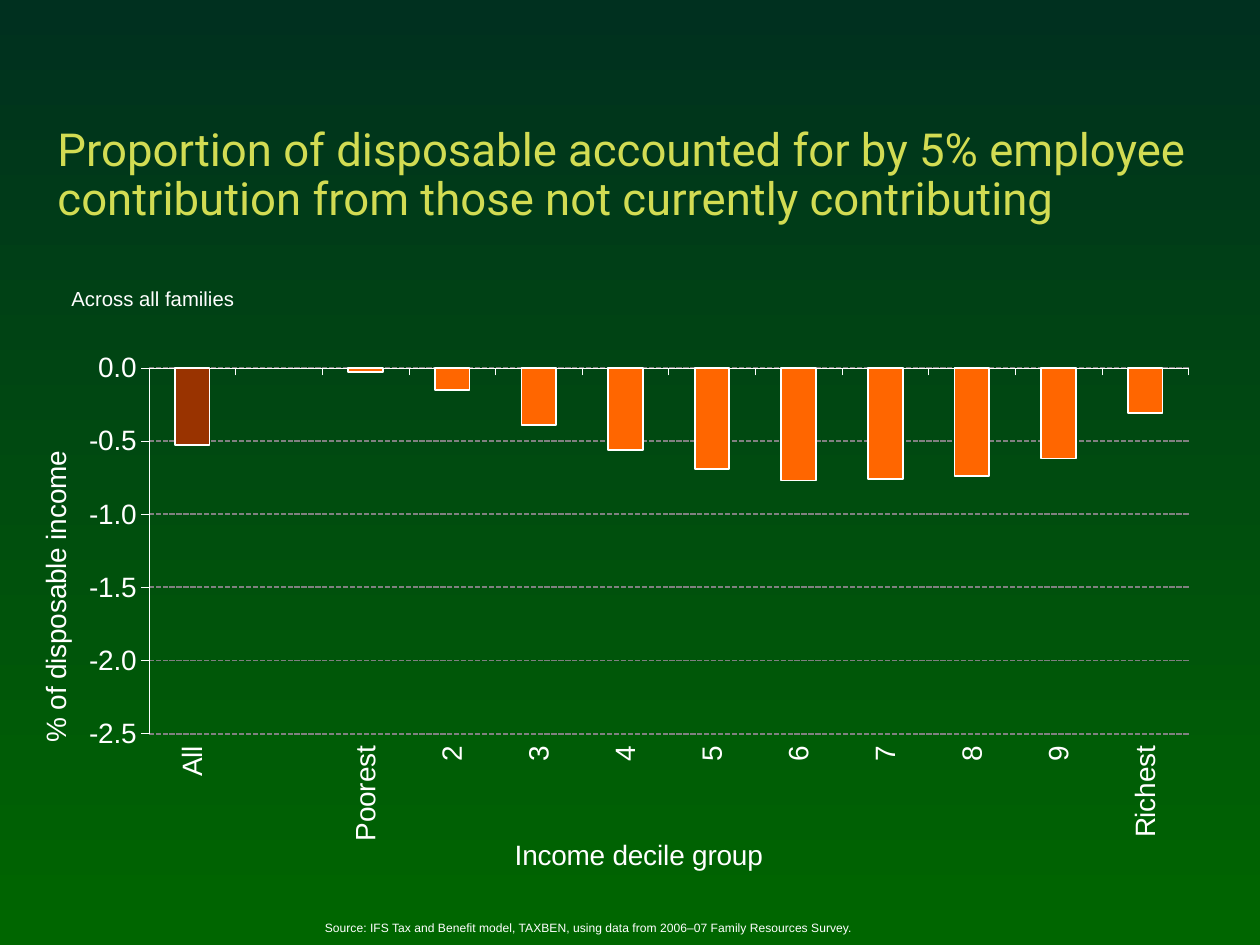
from dataclasses import dataclass

from lxml import etree
from pptx import Presentation
from pptx.chart.data import CategoryChartData
from pptx.dml.color import RGBColor
from pptx.enum.chart import XL_CHART_TYPE, XL_TICK_LABEL_POSITION, XL_TICK_MARK
from pptx.enum.dml import MSO_LINE
from pptx.enum.text import MSO_ANCHOR
from pptx.oxml.ns import qn
from pptx.util import Cm, Pt

CLUSTERED = XL_CHART_TYPE.COLUMN_CLUSTERED
LOW = XL_TICK_LABEL_POSITION.LOW
OUTSIDE = XL_TICK_MARK.OUTSIDE
DASH = MSO_LINE.SQUARE_DOT
TOP, BOTTOM = MSO_ANCHOR.TOP, MSO_ANCHOR.BOTTOM
UPWARD = "-5400000"


@dataclass(frozen=True)
class Theme:
    bg_top: str = "00301F"
    bg_bottom: str = "006600"
    title: str = "D2DC53"
    text: str = "FFFFFF"
    grid: str = "808080"
    all_bar: str = "993300"
    decile_bar: str = "FF6600"
    title_font: str = "Roboto"
    body_font: str = "Arial"
    title_size: int = 26
    subtitle_size: int = 20
    chart_size: int = 16
    source_size: int = 12


THEME = Theme()

CATEGORIES = ["All", "", "Poorest", *map(str, range(2, 10)), "Richest"]
DECILES = [-0.03, -0.15, -0.39, -0.56, -0.69, -0.77, -0.76, -0.74, -0.62, -0.31]


def rgb(color):
    return RGBColor.from_string(color)


def format_font(font, size, color=THEME.text, name=THEME.body_font):
    font.size, font.name, font.bold = Pt(size), name, False
    font.color.rgb = rgb(color)


def format_line(line, color, width):
    line.color.rgb = rgb(color)
    line.width = Pt(width)


def set_background(s):
    fill = s.background.fill
    fill.gradient()
    fill.gradient_angle = 270
    for stop, color in zip(fill.gradient_stops, (THEME.bg_top, THEME.bg_bottom)):
        stop.color.rgb = rgb(color)


def add_text(s, text, box, *, size, color=THEME.text, font=THEME.body_font,
             anchor=TOP, spacing=None, baseline=None):
    tf = s.shapes.add_textbox(*map(Cm, box)).text_frame
    tf.word_wrap = True
    tf.vertical_anchor = anchor
    p = tf.paragraphs[0]
    if spacing:
        p.line_spacing = spacing
    r = p.add_run()
    r.text = text
    format_font(r.font, size, color, font)
    if baseline:
        r.font._element.set("baseline", str(baseline * 1000))


def format_axis(axis, title):
    format_font(axis.tick_labels.font, THEME.chart_size)
    format_line(axis.format.line, THEME.text, 0.25)
    axis.major_tick_mark = OUTSIDE
    tf = axis.axis_title.text_frame
    tf.text = title
    format_font(tf.paragraphs[0].runs[0].font, THEME.chart_size)


def set_plot_layout(chart, **fractions):
    plot_area = chart.element.find(".//" + qn("c:plotArea"))
    for old in plot_area.findall(qn("c:layout")):
        plot_area.remove(old)
    layout = etree.Element(qn("c:layout"))
    manual = etree.SubElement(layout, qn("c:manualLayout"))
    settings = {"layoutTarget": "inner", "xMode": "edge", "yMode": "edge", **fractions}
    for tag, value in settings.items():
        etree.SubElement(manual, qn("c:" + tag)).set("val", str(value))
    plot_area.insert(0, layout)


def turn_upward(chart, *parents):
    for parent in parents:
        route = ".//" + "/".join(qn("c:" + tag) for tag in parent)
        body = chart.element.find(route + "/" + qn("a:bodyPr"))
        body.set("rot", UPWARD)
        body.set("vert", "horz")


def add_income_chart(s, box):
    data = CategoryChartData(number_format="0.00")
    data.categories = CATEGORIES
    data.add_series("Series 1", [-0.53] + [None] * 11)
    data.add_series("Series 2", [None, None] + DECILES)
    chart = s.shapes.add_chart(CLUSTERED, *map(Cm, box), data).chart
    format_font(chart.font, THEME.chart_size)
    chart.has_legend = chart.has_title = False

    # Bars
    plot = chart.plots[0]
    plot.vary_by_categories = False
    plot.gap_width, plot.overlap = 150, 100
    for series, color in zip(plot.series, (THEME.all_bar, THEME.decile_bar)):
        series.invert_if_negative = False
        series.format.fill.solid()
        series.format.fill.fore_color.rgb = rgb(color)
        format_line(series.format.line, THEME.text, 1)

    # Axes and gridlines
    format_axis(chart.category_axis, "Income decile group")
    chart.category_axis.tick_label_position = LOW
    axis = chart.value_axis
    format_axis(axis, "% of disposable income")
    axis.minimum_scale, axis.maximum_scale, axis.major_unit = -2.5, 0, 0.5
    axis.tick_labels.number_format = "0.0"
    axis.tick_labels.number_format_is_linked = False
    grid = axis.major_gridlines.format.line
    format_line(grid, THEME.grid, 1)
    grid.dash_style = DASH

    # Plot position and vertical labels
    set_plot_layout(chart, x=0.098, y=0.045, w=0.877, h=0.683)
    turn_upward(chart, ("catAx", "txPr"), ("valAx", "title", "tx", "rich"))


def main():
    prs = Presentation()
    prs.slide_width, prs.slide_height = Cm(25.4), Cm(19.05)
    s = prs.slides.add_slide(prs.slide_layouts[6])
    set_background(s)

    # Title
    add_text(s, "Proportion of disposable accounted for by 5% employee "
             "contribution from those not currently contributing",
             (0.91, 2.13, 23.57, 2.54), size=THEME.title_size, color=THEME.title,
             font=THEME.title_font, anchor=BOTTOM, spacing=0.9)

    # Chart with its subtitle and source
    add_income_chart(s, (0.66, 6.93, 23.9, 10.8))
    add_text(s, "Across all families", (1.19, 5.18, 21.29, 1.12),
             size=THEME.subtitle_size, baseline=-25)
    add_text(s, "Source: IFS Tax and Benefit model, TAXBEN, using data from "
             "2006–07 Family Resources Survey.", (6.3, 18.14, 19, 0.61),
             size=THEME.source_size, baseline=-25)

    prs.save("out.pptx")


if __name__ == "__main__":
    main()
